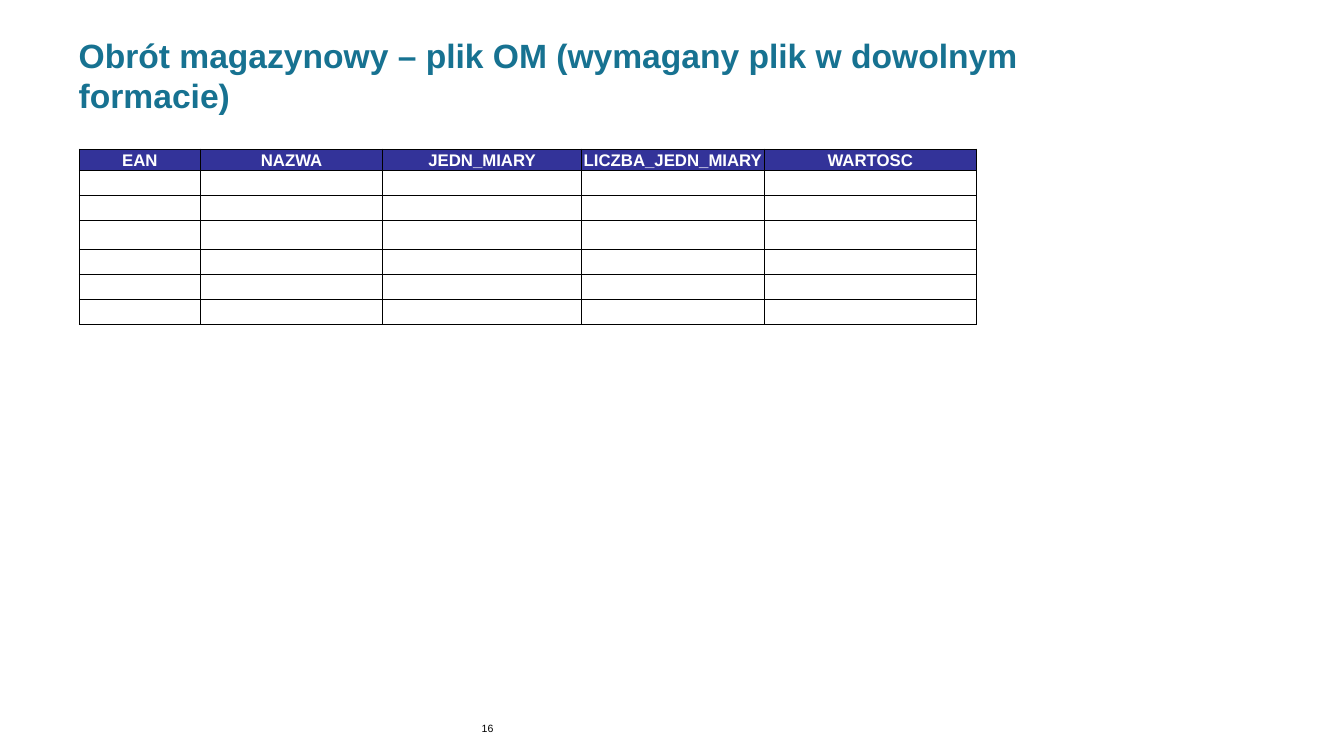
from dataclasses import dataclass

from lxml.etree import SubElement
from pptx import Presentation
from pptx.dml.color import RGBColor
from pptx.enum.text import MSO_ANCHOR as Anchor, MSO_AUTO_SIZE as AutoSize, PP_ALIGN as Align
from pptx.oxml.ns import qn
from pptx.util import Cm, Pt


@dataclass(frozen=True)
class Theme:
    font: str = "Arial"
    title_color: str = "177291"
    header_fill: str = "333399"
    header_text: str = "FFFFFF"
    ink: str = "000000"
    title_size: float = 24
    table_size: float = 12
    number_size: float = 7.5
    border_width: float = 1


THEME = Theme()
HEADERS = ["EAN", "NAZWA", "JEDN_MIARY", "LICZBA_JEDN_MIARY", "WARTOSC"]
COLUMN_WIDTHS = [3.05, 4.6, 5, 4.62, 5.33]
ROW_HEIGHTS = [0.53, 0.63, 0.63, 0.73, 0.63, 0.63, 0.63]


def format_text(paragraph, size, color, bold=False):
    for run in paragraph.runs:
        run.font.name = THEME.font
        run.font.size = Pt(size)
        run.font.bold = bold
        run.font.color.rgb = RGBColor.from_string(color)


def add_title(slide, text, left, top, width, height):
    title = slide.shapes.title
    title.left, title.top, title.width, title.height = map(Cm, (left, top, width, height))
    frame = title.text_frame
    frame.text = text
    frame.word_wrap = True
    frame.auto_size = AutoSize.NONE
    frame.vertical_anchor = Anchor.MIDDLE
    paragraph = frame.paragraphs[0]
    paragraph.alignment = Align.LEFT
    format_text(paragraph, THEME.title_size, THEME.title_color, bold=True)


def add_borders(cell):
    properties = cell._tc.get_or_add_tcPr()
    for side in ("a:lnL", "a:lnR", "a:lnT", "a:lnB"):
        line = SubElement(properties, qn(side), w=str(Pt(THEME.border_width)))
        fill = SubElement(line, qn("a:solidFill"))
        SubElement(fill, qn("a:srgbClr"), val=THEME.ink)


def format_cell(cell, is_header):
    add_borders(cell)
    cell.margin_left = cell.margin_right = cell.margin_top = Cm(0.02)
    cell.margin_bottom = 0
    cell.vertical_anchor = Anchor.MIDDLE
    paragraph = cell.text_frame.paragraphs[0]
    if is_header:
        cell.fill.solid()
        cell.fill.fore_color.rgb = RGBColor.from_string(THEME.header_fill)
        paragraph.alignment = Align.CENTER
        format_text(paragraph, THEME.table_size, THEME.header_text, bold=True)
    else:
        cell.fill.background()
        # The size of an empty paragraph keeps its row low
        SubElement(paragraph._p, qn("a:endParaRPr"), sz=str(THEME.table_size * 100))


def add_stock_table(slide, left, top):
    frame = slide.shapes.add_table(
        len(ROW_HEIGHTS), len(HEADERS), Cm(left), Cm(top),
        Cm(sum(COLUMN_WIDTHS)), Cm(sum(ROW_HEIGHTS)))
    table = frame.table
    table.horz_banding = False
    for column, width in zip(table.columns, COLUMN_WIDTHS):
        column.width = Cm(width)
    for column_index, header in enumerate(HEADERS):
        table.cell(0, column_index).text = header
    for row_index, (row, height) in enumerate(zip(table.rows, ROW_HEIGHTS)):
        row.height = Cm(height)
        for cell in row.cells:
            format_cell(cell, is_header=row_index == 0)


def add_slide_number(slide, number, left, top, width, height, indent):
    box = slide.shapes.add_textbox(Cm(left), Cm(top), Cm(width), Cm(height))
    frame = box.text_frame
    frame.word_wrap = True
    frame.margin_left = Cm(indent)
    frame.text = number
    format_text(frame.paragraphs[0], THEME.number_size, THEME.ink)


def main():
    presentation = Presentation()
    presentation.slide_width, presentation.slide_height = Cm(33.87), Cm(19.05)
    slide = presentation.slides.add_slide(presentation.slide_layouts[5])

    # Title
    add_title(slide, "Obrót magazynowy – plik OM (wymagany plik w dowolnym formacie)",
              left=1.73, top=1.12, width=26.44, height=1.55)
    # Empty stock turnover table
    add_stock_table(slide, left=2, top=3.76)
    # Footer
    add_slide_number(slide, "16", left=1.73, top=18.08, width=30.4, height=0.74, indent=10.41)

    presentation.save("out.pptx")


if __name__ == "__main__":
    main()
